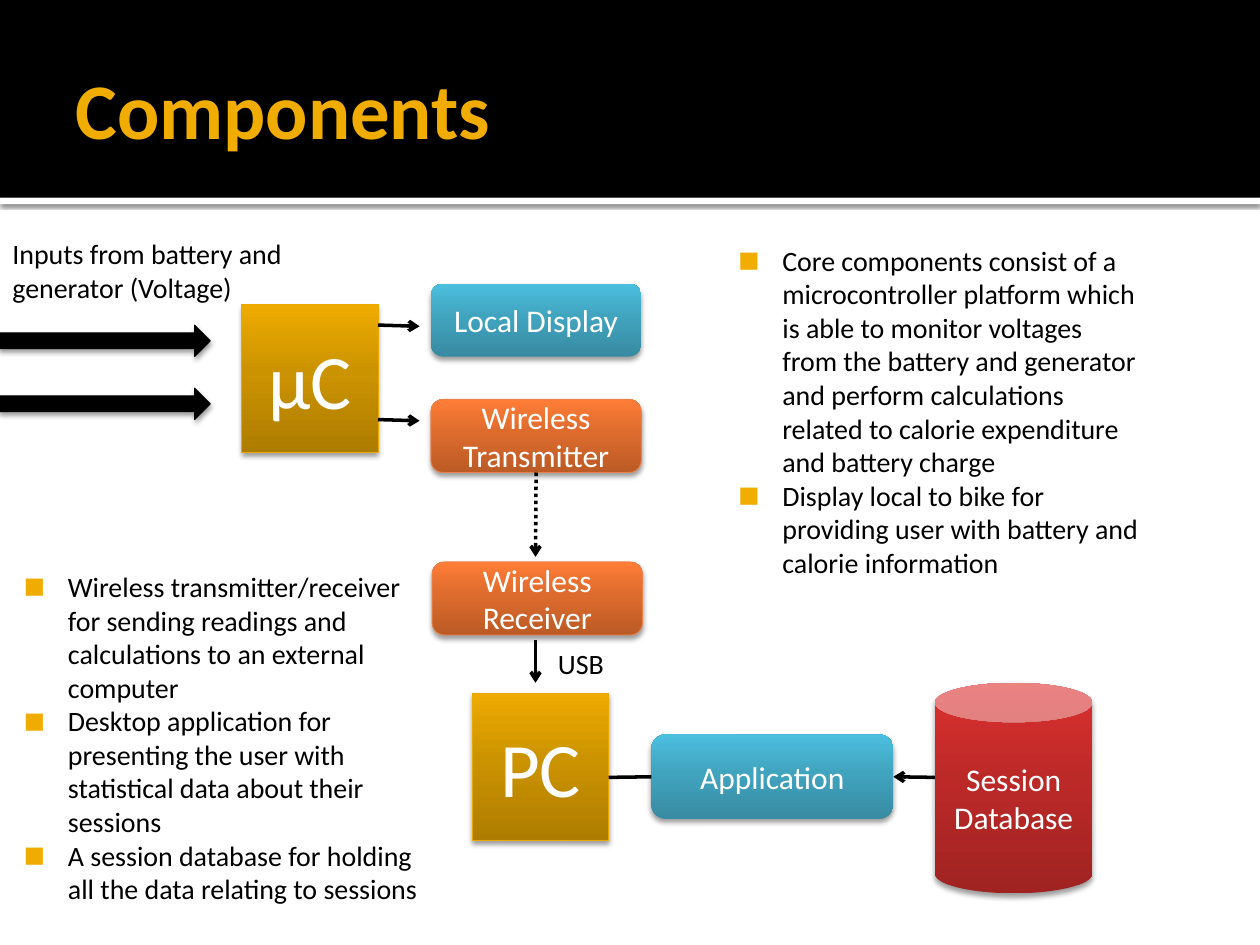
from copy import deepcopy
from dataclasses import dataclass
from lxml import etree
from pptx import Presentation
from pptx.dml.color import RGBColor
from pptx.enum.dml import MSO_LINE
from pptx.enum.shapes import MSO_CONNECTOR, MSO_SHAPE
from pptx.enum.text import MSO_ANCHOR, MSO_AUTO_SIZE, PP_ALIGN
from pptx.oxml.ns import qn
from pptx.util import Inches, Pt

RECT, PROCESS = MSO_SHAPE.RECTANGLE, MSO_SHAPE.FLOWCHART_PROCESS
ROUNDED, CAN = MSO_SHAPE.FLOWCHART_ALTERNATE_PROCESS, MSO_SHAPE.CAN
RIGHT_ARROW = MSO_SHAPE.RIGHT_ARROW
STRAIGHT, DOTTED = MSO_CONNECTOR.STRAIGHT, MSO_LINE.ROUND_DOT
MIDDLE, CENTER, LEFT = MSO_ANCHOR.MIDDLE, PP_ALIGN.CENTER, PP_ALIGN.LEFT
NO_FIT = MSO_AUTO_SIZE.NONE
LEFT_SIDE, BOTTOM_SIDE, RIGHT_SIDE = 1, 2, 3


@dataclass(frozen=True)
class Theme:
    font: str = "Calibri"
    black: str = "000000"
    white: str = "FFFFFF"
    accent: str = "F0AD00"
    # Gradients run from bottom to top
    gold: tuple = ("AE7D00", "CC9300", "EEAB00")
    blue: tuple = ("378BA2", "41A4BF", "4BBFDE")
    red: tuple = ("A02322", "BC2A28", "DC302F")
    orange: tuple = ("BC5B26", "DD6B2D", "FF7D37")
    gold_line: str = "EBA900"
    orange_line: str = "E7824C"
    title: int = 45
    chip: int = 44
    label: int = 18
    body: int = 16


THEME = Theme()


def rgb(value):
    return RGBColor.from_string(value)


def style_text(frame, size, color, bold=False, align=LEFT):
    for para in frame.paragraphs:
        para.alignment = align
        for span in para.runs:
            span.font.name, span.font.size = THEME.font, Pt(size)
            span.font.bold, span.font.color.rgb = bold, rgb(color)


def add_shadow(shape, opacity=38, blur=3.1, distance=2):
    shape.shadow.inherit = False
    effects = shape._element.spPr.find(qn("a:effectLst"))
    shadow = etree.SubElement(effects, qn("a:outerShdw"), blurRad=str(Pt(blur)),
                              dist=str(Pt(distance)), dir="5400000", rotWithShape="0")
    color = etree.SubElement(shadow, qn("a:srgbClr"), val=THEME.black)
    etree.SubElement(color, qn("a:alpha"), val=str(opacity * 1000))


def fill_gradient(shape, colors):
    shape.fill.gradient()
    shape.fill.gradient_angle = 90
    stop_list = shape._element.spPr.find(qn("a:gradFill")).find(qn("a:gsLst"))
    stop_list.insert(1, deepcopy(stop_list[0]))
    for stop, color, position in zip(shape.fill.gradient_stops, colors, (0, 0.55, 1)):
        stop.color.rgb, stop.position = rgb(color), position


def add_block(page, kind, box, fill, line=None):
    shape = page.shapes.add_shape(kind, *map(Inches, box))
    if isinstance(fill, tuple):
        fill_gradient(shape, fill)
    else:
        shape.fill.solid()
        shape.fill.fore_color.rgb = rgb(fill)
    if line:
        shape.line.color.rgb, shape.line.width = rgb(line), Pt(0.5)
    else:
        shape.line.fill.background()
    shape.shadow.inherit = False
    return shape


def add_node(page, kind, box, text, colors, line=None, size=THEME.label):
    node = add_block(page, kind, box, colors, line)
    add_shadow(node)
    frame = node.text_frame
    frame.text, frame.word_wrap, frame.vertical_anchor = text, True, MIDDLE
    style_text(frame, size, THEME.white, align=CENTER)
    return node


def add_link(page, start, end, arrow=True, dash=None):
    link = page.shapes.add_connector(STRAIGHT, *map(Inches, start + end))
    link.line.color.rgb, link.line.width = rgb(THEME.black), Pt(2)
    if dash:
        link.line.dash_style = dash
    if arrow:
        etree.SubElement(link.line._get_or_add_ln(), qn("a:tailEnd"), type="arrow")
    etree.SubElement(link._element.spPr, qn("a:effectLst"))
    return link


def add_text(page, box, paragraphs):
    frame = page.shapes.add_textbox(*map(Inches, box)).text_frame
    frame.word_wrap, frame.text = True, "\n".join(paragraphs)
    style_text(frame, THEME.body, THEME.black)
    return frame


def add_header(page, box, text):
    left, top, width, height = box
    strip = add_block(page, RECT, (left, top + height, width, 0.05), THEME.white)
    add_shadow(strip, opacity=60, blur=2.5, distance=0.8)
    add_block(page, RECT, box, THEME.black)
    title = page.shapes.title
    title.left, title.top = Inches(left + 0.5), Inches(top + 0.17)
    title.width, title.height = Inches(width - 1), Inches(1.37)
    frame = title.text_frame
    frame.text, frame.vertical_anchor, frame.auto_size = text, MIDDLE, NO_FIT
    frame.margin_left = Inches(0.1)
    frame.margin_top = frame.margin_right = frame.margin_bottom = Inches(0.05)
    style_text(frame, THEME.title, THEME.accent, bold=True)
    # Bring the title in front of the band
    page.shapes._spTree.append(title._element)


def add_bike_unit(page, box):
    """Inputs, microcontroller, display and the wireless pair."""
    left, top, width, height = box
    for row in range(2):
        arrow = add_block(page, RIGHT_ARROW, (left, top + 0.75 + row * 0.5, 1.67, 0.25),
                          THEME.black, THEME.black)
        add_shadow(arrow)
    add_node(page, PROCESS, (left + 1.92, top + 0.59, 1.08, 1.17), "µC",
             THEME.gold, THEME.gold_line, THEME.chip)
    column, node_width, node_height = left + 3.42, 1.67, 0.58
    add_node(page, ROUNDED, (column, top + 0.42, node_width, node_height),
             "Local Display", THEME.blue)
    transmitter, _ = [
        add_node(page, ROUNDED, (x, y, node_width, node_height), text,
                 THEME.orange, THEME.orange_line)
        for x, y, text in ((column, top + 1.34, "Wireless Transmitter"),
                           (column + 0.01, top + height - node_height, "Wireless Receiver"))]
    for y in (top + 0.75, top + 1.5):
        add_link(page, (left + 3, y), (left + 3.33, y + 0.01))
    radio = add_link(page, (left + 4.25, top + 1.92), (left + 4.25, top + 2.59), dash=DOTTED)
    radio.begin_connect(transmitter, BOTTOM_SIDE)
    add_text(page, (left, top, 2.42, 0.64), ["Inputs from battery and generator (Voltage)"])


def add_computer_unit(page, box):
    """USB link, PC, application and database."""
    left, top, width, height = box
    axis = top + 1.09
    add_node(page, PROCESS, (left, top + 0.42, 1.08, 1.17), "PC",
             THEME.gold, THEME.gold_line, THEME.chip)
    application = add_node(page, ROUNDED, (left + 1.42, top + 0.75, 1.92, 0.67),
                           "Application", THEME.blue)
    add_node(page, CAN, (left + width - 1.25, top + height - 1.67, 1.25, 1.67),
             "Session Database", THEME.red)
    add_link(page, (left + 0.5, top), (left + 0.5, top + 0.34))
    pc_link = add_link(page, (left + 1.08, axis), (left + 1.42, axis), arrow=False)
    pc_link.end_connect(application, LEFT_SIDE)
    data_link = add_link(page, (left + 3.67, axis), (left + 3.34, axis))
    data_link.end_connect(application, RIGHT_SIDE)
    add_text(page, (left + 0.58, top, 2.25, 0.37), ["USB"])


def add_bullets(page, box, items):
    frame = add_text(page, box, items)
    frame.margin_left, frame.margin_top = Inches(0.06), Inches(0.1)
    for para in frame.paragraphs:
        props = para._p.get_or_add_pPr()
        props.set("marL", str(Inches(0.48)))
        props.set("indent", str(Inches(-0.35)))
        color = etree.SubElement(props, qn("a:buClr"))
        etree.SubElement(color, qn("a:srgbClr"), val=THEME.accent)
        etree.SubElement(props, qn("a:buSzPct"), val="80000")
        etree.SubElement(props, qn("a:buFont"), typeface=THEME.font)
        etree.SubElement(props, qn("a:buChar"), char="■")


def main():
    deck = Presentation()
    deck.slide_width, deck.slide_height = Inches(10), Inches(7.5)
    page = deck.slides.add_slide(deck.slide_layouts.get_by_name("Title Only"))
    add_header(page, (0, 0, 10, 1.57), "Components")
    add_bike_unit(page, (0, 1.83, 5.1, 3.21))
    add_computer_unit(page, (3.75, 5.08, 4.92, 2.01))
    add_bullets(page, (5.67, 1.83, 3.5, 3.6), [
        "Core components consist of a microcontroller platform which is able to monitor "
        "voltages from the battery and generator and perform calculations related to "
        "calorie expenditure and battery charge",
        "Display local to bike for providing user with battery and calorie information"])
    add_bullets(page, (0, 4.42, 3.5, 3.6), [
        "Wireless transmitter/receiver for sending readings and calculations to an "
        "external computer",
        "Desktop application for presenting the user with statistical data about their "
        "sessions",
        "A session database for holding all the data relating to sessions"])
    deck.save("out.pptx")


if __name__ == "__main__":
    main()
